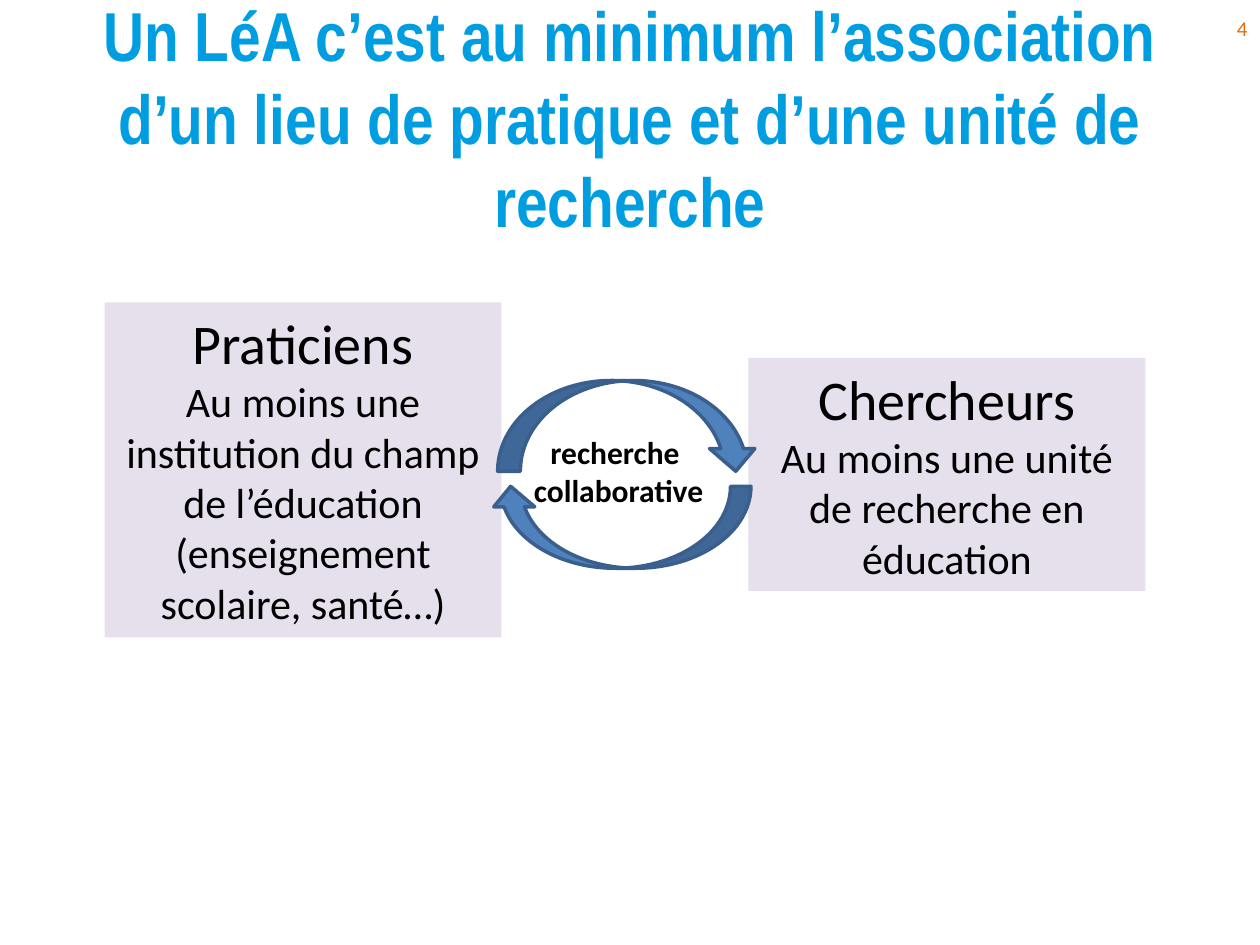
"""Build the slide on what a LéA brings together."""
from dataclasses import dataclass
from typing import Any

import pptx
import pptx.dml.color
import pptx.enum.shapes
import pptx.enum.text
import pptx.util

Inches = pptx.util.Inches
Pt = pptx.util.Pt
Align = pptx.enum.text.PP_ALIGN
Anchor = pptx.enum.text.MSO_ANCHOR
Size = pptx.enum.text.MSO_AUTO_SIZE
Kind = pptx.enum.shapes.MSO_SHAPE

Box = tuple[float, float, float, float]


@dataclass
class Line:
    text: str
    size: float
    color: str = "000000"
    bold: bool = False
    font: str = "Calibri"
    align: Any = Align.CENTER


@dataclass
class Label:
    box: Box
    lines: list[Line]
    frame: dict[str, Any]


@dataclass
class Card:
    box: Box
    head: str
    body: str


@dataclass
class Arrow:
    box: Box
    turn: float


def paint(target: Any, color: str) -> None:
    target.rgb = pptx.dml.color.RGBColor.from_string(color)


def apply(target: Any, values: dict[str, Any]) -> None:
    for name, value in values.items():
        setattr(target, name, value)


def write(frame: Any, lines: list[Line], values: dict[str, Any]) -> None:
    apply(frame, values)
    for i, line in enumerate(lines):
        par = frame.paragraphs[0] if i == 0 else frame.add_paragraph()
        par.alignment = line.align
        run = par.add_run()
        run.text = line.text
        apply(run.font, {"name": line.font, "size": Pt(line.size), "bold": line.bold})
        paint(run.font.color, line.color)


def add_label(shapes: Any, label: Label) -> None:
    box = shapes.add_textbox(*map(Inches, label.box))
    write(box.text_frame, label.lines, label.frame)


def add_solid(shapes: Any, kind: Any, box: Box, color: str) -> Any:
    shape = shapes.add_shape(kind, *map(Inches, box))
    shape.shadow.inherit = False
    shape.fill.solid()
    paint(shape.fill.fore_color, color)
    return shape


def add_card(shapes: Any, card: Card) -> None:
    shape = add_solid(shapes, Kind.RECTANGLE, card.box, "E6E0EC")
    shape.line.fill.background()
    write(shape.text_frame, [Line(card.head, 32), Line(card.body, 24)],
          {"word_wrap": True, "auto_size": Size.SHAPE_TO_FIT_TEXT,
           "vertical_anchor": Anchor.TOP})


def add_arrow(shapes: Any, arrow: Arrow) -> None:
    shape = add_solid(shapes, Kind.CURVED_DOWN_ARROW, arrow.box, "4F81BD")
    shape.rotation = arrow.turn
    shape.line.width = Pt(2)
    paint(shape.line.color, "3A5F8C")


MID = {"word_wrap": True, "auto_size": Size.NONE, "vertical_anchor": Anchor.MIDDLE}
TITLE = Label(
    (0.5, 0.3, 9, 1.25),
    [Line("Un LéA c’est au minimum l’association d’un lieu de pratique "
          "et d’une unité de recherche", 39.6, "009EE0", True, "Arial Narrow")],
    MID)
PAGE = Label((7.67, 0.02, 2.33, 0.4),
             [Line("4", 12, "E46C0A", align=Align.RIGHT)], MID)
LINK = Label(
    (4.13, 3.39, 1.56, 0.71),
    [Line("recherche ", 18, bold=True), Line("collaborative", 18, bold=True)],
    {"word_wrap": False, "auto_size": Size.SHAPE_TO_FIT_TEXT})
CARDS = [
    Card((0.83, 2.4, 3.15, 2.66), "Praticiens",
         "Au moins une institution du champ de l’éducation "
         "(enseignement scolaire, santé…)"),
    Card((5.94, 2.84, 3.15, 1.85), "Chercheurs",
         "Au moins une unité de recherche en éducation"),
]
ARROWS = [Arrow((3.95, 3.02, 2.07, 0.72), 0), Arrow((3.89, 3.86, 2.07, 0.65), 180)]


def main() -> None:
    deck = pptx.Presentation()
    apply(deck, {"slide_width": Inches(10), "slide_height": Inches(7.5)})
    shapes = deck.slides.add_slide(deck.slide_layouts[6]).shapes
    for label in (TITLE, PAGE):
        add_label(shapes, label)
    for card in CARDS:
        add_card(shapes, card)
    cycle = shapes.add_group_shape().shapes
    for arrow in ARROWS:
        add_arrow(cycle, arrow)
    add_label(cycle, LINK)
    deck.save("out.pptx")


if __name__ == "__main__":
    main()
